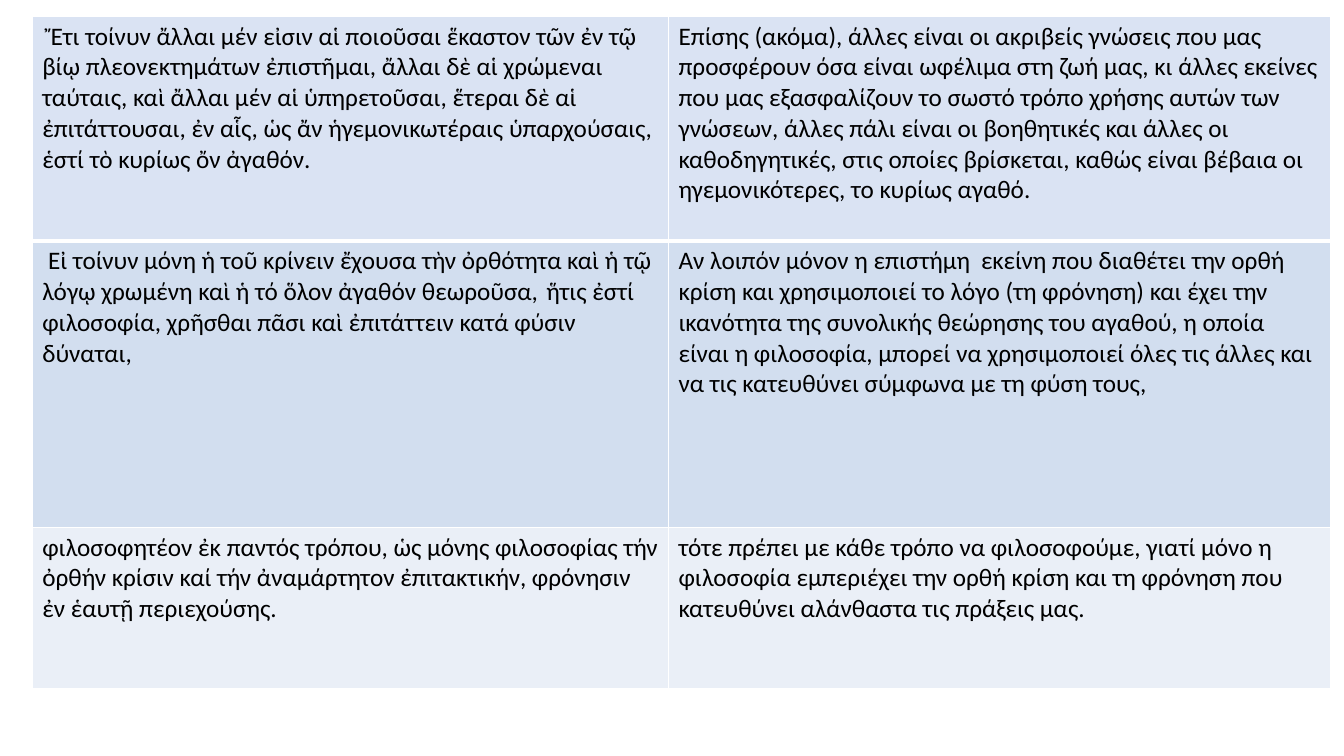
"""Builds a slide with an ancient Greek passage beside its modern translation."""
from dataclasses import dataclass

from pptx import Presentation
from pptx.dml.color import RGBColor as Color
from pptx.oxml import parse_xml
from pptx.oxml.ns import nsdecls
from pptx.util import Inches, Pt


@dataclass(frozen=True)
class Theme:
    font: str = "Calibri"
    text_size: int = 18
    text_color: str = "000000"
    border_color: str = "FFFFFF"
    thin_border: int = 1
    thick_border: int = 3
    row_fills: tuple = ("DAE3F3", "D2DEEF", "EAEFF7")


class SlideBuilder:
    def __init__(self, slide, theme):
        self.slide = slide
        self.theme = theme

    def add_table(self, left, top, column_widths, row_heights, passages):
        frame = self.slide.shapes.add_table(
            len(row_heights), len(column_widths), Inches(left), Inches(top),
            Inches(sum(column_widths)), Inches(sum(row_heights)))
        table = frame.table
        table.first_row = table.horz_banding = False
        for column, width in zip(table.columns, column_widths):
            column.width = Inches(width)
        for row_index, (row, height) in enumerate(zip(table.rows, row_heights)):
            row.height = Inches(height)
            for cell, text in zip(row.cells, passages[row_index]):
                self.fill_cell(cell, text, row_index)

    def fill_cell(self, cell, text, row_index):
        theme = self.theme
        cell.fill.solid()
        cell.fill.fore_color.rgb = Color.from_string(theme.row_fills[row_index])
        run = cell.text_frame.paragraphs[0].add_run()
        run.text = text
        run.font.name = theme.font
        run.font.size = Pt(theme.text_size)
        run.font.color.rgb = Color.from_string(theme.text_color)
        thin, thick = theme.thin_border, theme.thick_border
        self.set_borders(cell, {
            "lnL": thin,
            "lnR": thin,
            "lnT": thick if row_index == 1 else thin,
            "lnB": thick if row_index == 0 else thin,
        })

    def set_borders(self, cell, widths):
        properties = cell._tc.get_or_add_tcPr()
        for position, (side, width) in enumerate(widths.items()):
            properties.insert(position, parse_xml(
                f'<a:{side} {nsdecls("a")} w="{Pt(width)}"><a:solidFill>'
                f'<a:srgbClr val="{self.theme.border_color}"/>'
                f'</a:solidFill></a:{side}>'))


PASSAGES = [
    (" Ἔτι τοίνυν ἄλλαι μέν εἰσιν αἱ ποιοῦσαι ἕκαστον τῶν ἐν τῷ βίῳ "
     "πλεονεκτημάτων ἐπιστῆμαι, ἄλλαι δὲ αἱ χρώμεναι ταύταις, καὶ ἄλλαι μέν αἱ "
     "ὑπηρετοῦσαι, ἕτεραι δὲ αἱ ἐπιτάττουσαι, ἐν αἷς, ὡς ἄν ἡγεμονικωτέραις "
     "ὑπαρχούσαις, ἑστί τὸ κυρίως ὄν ἀγαθόν.",
     "Επίσης (ακόμα), άλλες είναι οι ακριβείς γνώσεις που μας προσφέρουν όσα "
     "είναι ωφέλιμα στη ζωή μας, κι άλλες εκείνες που μας εξασφαλίζουν το σωστό "
     "τρόπο χρήσης αυτών των γνώσεων, άλλες πάλι είναι οι βοηθητικές και άλλες "
     "οι καθοδηγητικές, στις οποίες βρίσκεται, καθώς είναι βέβαια οι "
     "ηγεμονικότερες, το κυρίως αγαθό."),
    (" Εἰ τοίνυν μόνη ἡ τοῦ κρίνειν ἔχουσα τὴν ὀρθότητα καὶ ἡ τῷ λόγῳ χρωμένη "
     "καὶ ἡ τό ὅλον ἀγαθόν θεωροῦσα, \tἥτις ἐστί φιλοσοφία, χρῆσθαι πᾶσι καὶ "
     "ἐπιτάττειν κατά φύσιν δύναται,",
     "Αν λοιπόν μόνον η επιστήμη \tεκείνη που διαθέτει την ορθή κρίση και "
     "χρησιμοποιεί το λόγο (τη φρόνηση) και έχει την ικανότητα της συνολικής "
     "θεώρησης του αγαθού, η οποία είναι η φιλοσοφία, μπορεί να χρησιμοποιεί "
     "όλες τις άλλες και να τις κατευθύνει σύμφωνα με τη φύση τους,"),
    ("φιλοσοφητέον ἐκ παντός τρόπου, ὡς μόνης φιλοσοφίας τήν ὀρθήν κρίσιν καί "
     "τήν ἀναμάρτητον ἐπιτακτικήν, φρόνησιν ἐν ἑαυτῇ περιεχούσης.",
     "τότε πρέπει με κάθε τρόπο να φιλοσοφούμε, γιατί μόνο η φιλοσοφία "
     "εμπεριέχει την ορθή κρίση και τη φρόνηση που κατευθύνει αλάνθαστα τις "
     "πράξεις μας."),
]


def main():
    presentation = Presentation()
    presentation.slide_width = Inches(13.33)
    presentation.slide_height = Inches(7.5)
    blank_layout = presentation.slide_layouts[6]
    builder = SlideBuilder(presentation.slides.add_slide(blank_layout), Theme())
    builder.add_table(0.32, 0.16, (6.31, 6.57), (2.23, 2.84, 1.6), PASSAGES)
    presentation.save("out.pptx")


if __name__ == "__main__":
    main()
